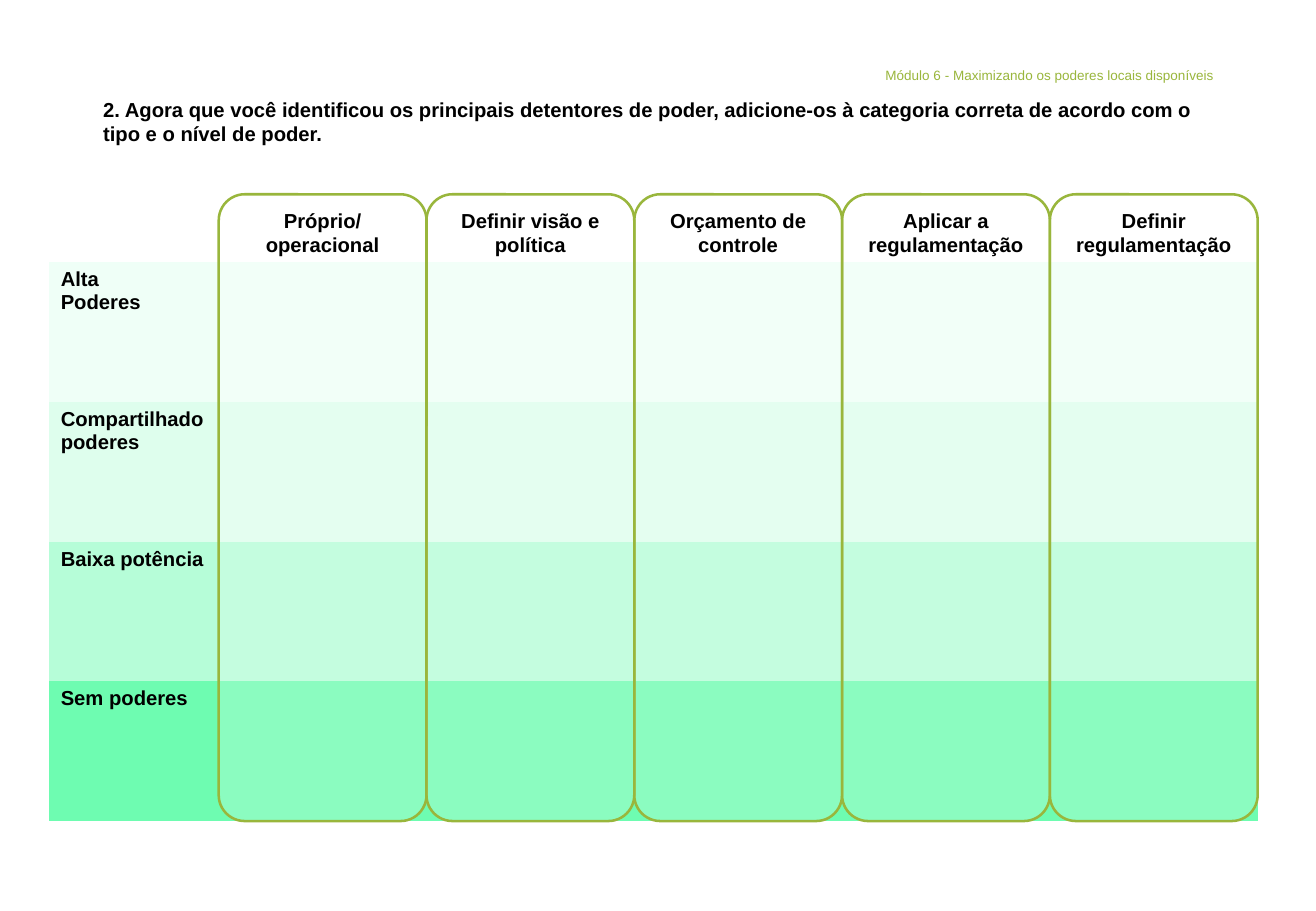
from lxml.etree import SubElement
from pptx import Presentation
from pptx.dml.color import RGBColor
from pptx.enum.shapes import MSO_SHAPE as Shape
from pptx.enum.text import MSO_ANCHOR as Anchor, PP_ALIGN as Align
from pptx.oxml.ns import qn
from pptx.util import Inches, Pt

BLACK, WHITE, OLIVE = "000000", "FFFFFF", "99B63C"
NO_GRID_STYLE = "{2D5ABB26-0587-4C30-8999-92F81FD0307C}"
GRID_LEFT, GRID_TOP = 1.8, 2.16
LABEL_WIDTH, HEADER_HEIGHT = 1.4, 0.56
COLUMN_WIDTH, ROW_HEIGHT = 1.71, 1.15

POWER_TYPES = [
    "Próprio/operacional",
    "Definir visão e política",
    "Orçamento de controle",
    "Aplicar a regulamentação",
    "Definir regulamentação",
]
POWER_LEVELS = [
    ("Alta\nPoderes", "EFFFF7"),
    ("Compartilhado\npoderes", "DEFEED"),
    ("Baixa potência", "B6FDD8"),
    ("Sem poderes", "6EFCB1"),
]


def color(value):
    return RGBColor.from_string(value)


def write(frame, text, size=12, ink=BLACK, bold=True, align=Align.LEFT,
          anchor=Anchor.TOP, spacing=1.0):
    frame.word_wrap = True
    frame.vertical_anchor = anchor
    frame.text = text
    for paragraph in frame.paragraphs:
        paragraph.alignment = align
        paragraph.line_spacing = spacing
        font = paragraph.font
        font.name, font.size, font.bold = "Arial", Pt(size), bold
        font.color.rgb = color(ink)


class PowerMatrix:
    """Draws the power matrix on one slide, on a grid of types and levels."""

    def __init__(self, presentation):
        self.slide = presentation.slides.add_slide(presentation.slide_layouts[6])

    def text(self, text, left, top, width, height, **style):
        box = self.slide.shapes.add_textbox(
            Inches(left), Inches(top), Inches(width), Inches(height))
        write(box.text_frame, text, **style)

    def levels(self, levels, columns):
        frame = self.slide.shapes.add_table(
            len(levels), 1, Inches(GRID_LEFT - LABEL_WIDTH), Inches(GRID_TOP),
            Inches(LABEL_WIDTH + columns * COLUMN_WIDTH),
            Inches(len(levels) * ROW_HEIGHT))
        table = frame.table
        table.first_row = table.horz_banding = False
        table._tbl.tblPr.find(qn("a:tableStyleId")).text = NO_GRID_STYLE
        for row, (label, fill) in enumerate(levels):
            cell = table.cell(row, 0)
            cell.fill.solid()
            cell.fill.fore_color.rgb = color(fill)
            write(cell.text_frame, label)

    def column(self, index, label, rows):
        shape = self.slide.shapes.add_shape(
            Shape.ROUNDED_RECTANGLE,
            Inches(GRID_LEFT + index * COLUMN_WIDTH), Inches(GRID_TOP - HEADER_HEIGHT),
            Inches(COLUMN_WIDTH), Inches(HEADER_HEIGHT + rows * ROW_HEIGHT))
        shape.shadow.inherit = False
        shape.adjustments[0] = 0.125
        shape.fill.solid()
        shape.fill.fore_color.rgb = color(WHITE)
        fill = shape.fill._xPr.find(qn("a:solidFill"))
        SubElement(fill[0], qn("a:alpha"), val="20000")
        shape.line.color.rgb = color(OLIVE)
        shape.line.width = Pt(1.5)
        write(shape.text_frame, label, align=Align.CENTER)


def main():
    presentation = Presentation()
    presentation.slide_width = Inches(10.83)
    presentation.slide_height = Inches(7.5)
    matrix = PowerMatrix(presentation)
    matrix.levels(POWER_LEVELS, len(POWER_TYPES))
    matrix.text("Módulo 6 - Maximizando os poderes locais disponíveis",
                6.67, 0.5, 3.42, 0.24, size=8, ink=OLIVE, bold=False,
                align=Align.RIGHT, anchor=Anchor.BOTTOM, spacing=0.9)
    matrix.text("2. Agora que você identificou os principais detentores de poder, "
                "adicione-os à categoria correta de acordo com o tipo e o nível de poder.",
                0.75, 0.75, 9.32, 0.5)
    for index, label in enumerate(POWER_TYPES):
        matrix.column(index, label, len(POWER_LEVELS))
    presentation.save("out.pptx")


if __name__ == "__main__":
    main()
